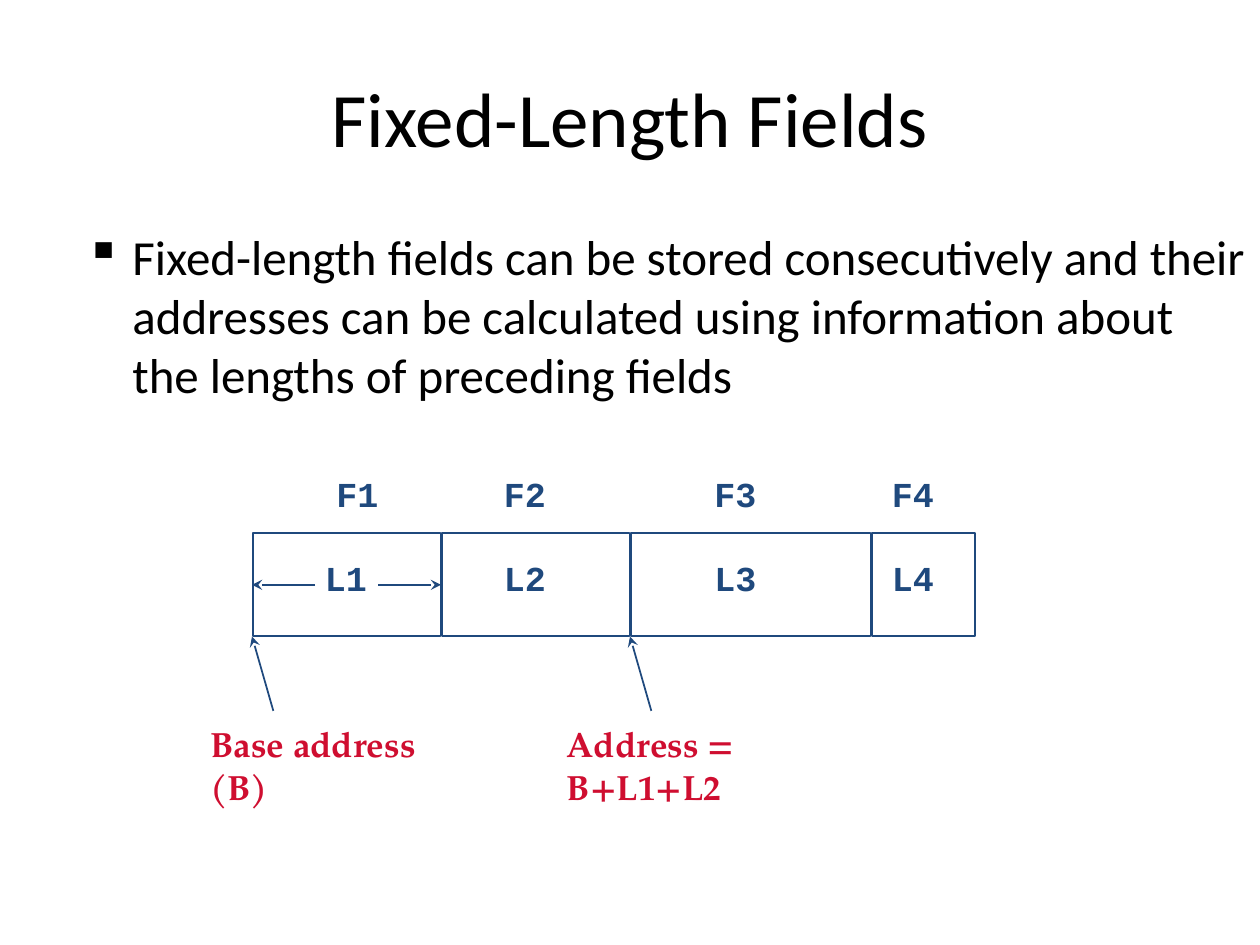
from lxml import etree
from pptx import Presentation
from pptx.dml.color import RGBColor
from pptx.enum.shapes import MSO_CONNECTOR, MSO_SHAPE
from pptx.enum.text import MSO_ANCHOR, PP_ALIGN
from pptx.oxml.ns import qn
from pptx.util import Cm, Pt

STRAIGHT = MSO_CONNECTOR.STRAIGHT
RECT = MSO_SHAPE.RECTANGLE
MIDDLE = MSO_ANCHOR.MIDDLE
CENTER = PP_ALIGN.CENTER

TITLE = {"name": "Calibri", "size": Pt(44), "color": "000000"}
BODY = {"name": "Calibri", "size": Pt(28), "color": "000000"}
FIELD = {"name": "Courier New", "size": Pt(20), "bold": True, "color": "1F497D"}
ADDRESS = {"name": "TeX Gyre Pagella", "size": Pt(20), "bold": True, "color": "CF0E30"}


def rgb(value):
    return RGBColor.from_string(value)


def write(sp, text, fmt, wrap=True):
    """Put formatted text in a shape and return its paragraph."""
    tf = sp.text_frame
    tf.word_wrap = wrap
    p = tf.paragraphs[0]
    r = p.add_run()
    r.text = text
    for key, value in fmt.items():
        if key == "color":
            r.font.color.rgb = rgb(value)
        else:
            setattr(r.font, key, value)
    return p


prs = Presentation()
prs.slide_width, prs.slide_height = Cm(25.4), Cm(19.05)
s = prs.slides.add_slide(prs.slide_layouts[5])

# Title
title = s.shapes.title
title.left, title.top, title.width, title.height = Cm(1.27), Cm(0.76), Cm(22.86), Cm(3.18)
title.text_frame.vertical_anchor = MIDDLE
write(title, "Fixed-Length Fields", TITLE).alignment = CENTER

# Bulleted statement
body = s.shapes.add_textbox(Cm(1.47), Cm(4.45), Cm(23.93), Cm(14.22))
p = write(body, "Fixed-length fields can be stored consecutively and their addresses "
          "can be calculated using information about the lengths of preceding fields", BODY)
p.space_before = Pt(5.6)
pPr = p._p.get_or_add_pPr()
pPr.set("marL", str(Cm(0.95)))
pPr.set("indent", str(-Cm(0.95)))
etree.SubElement(pPr, qn("a:buChar")).set("char", "▪")

# Record: one box per field, with its name above and its length inside
GAP = 0.03
x = 5.1
for i, (width, name_x, length_x) in enumerate([
        (3.78, 6.53, 6.3), (3.78, 9.91, 9.91), (4.83, 14.15, 14.15), (2.08, 17.73, 17.73)], 1):
    sp = s.shapes.add_shape(RECT, Cm(x), Cm(10.74), Cm(width), Cm(2.08))
    sp.shadow.inherit = False
    sp.fill.background()
    sp.line.color.rgb = rgb("1F497D")
    sp.line.width = Pt(1)
    x += width + GAP
    for text, left, top in [(f"F{i}", name_x, 9.4), (f"L{i}", length_x, 11.1)]:
        label = s.shapes.add_textbox(Cm(left), Cm(top), Cm(1.37), Cm(1.09))
        write(label, text, FIELD, wrap=False)

# Arrows: the extent of L1, then the two address pointers
for x1, y1, x2, y2 in [
        (6.35, 11.79, 5.08, 11.79), (7.62, 11.79, 8.89, 11.79),
        (5.51, 14.33, 5.08, 12.83), (13.13, 14.33, 12.7, 12.83)]:
    arrow = s.shapes.add_connector(STRAIGHT, Cm(x1), Cm(y1), Cm(x2), Cm(y2))
    arrow.line.color.rgb = rgb("1F497D")
    arrow.line.width = Pt(1)
    etree.SubElement(arrow.line._get_or_add_ln(), qn("a:tailEnd")).set("type", "stealth")
    etree.SubElement(arrow._element.spPr, qn("a:effectLst"))

# Address captions
for text, left, width in [("Base address (B)", 3.99, 5.82), ("Address = B+L1+L2", 11.18, 6.91)]:
    caption = s.shapes.add_textbox(Cm(left), Cm(14.45), Cm(width), Cm(1.09))
    write(caption, text, ADDRESS)

prs.save("out.pptx")
